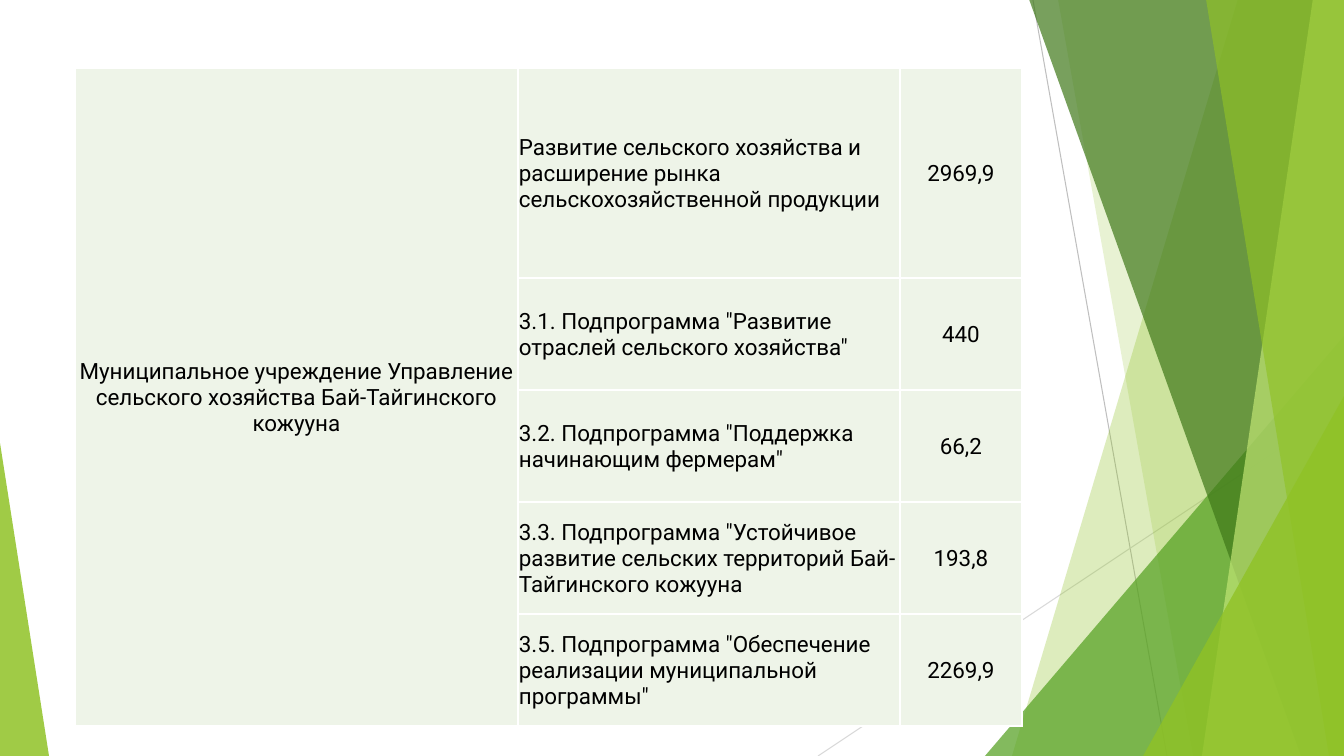
import pptx
import pptx.util
import pptx.dml.color
import pptx.enum.shapes
import pptx.enum.text
import pptx.oxml.ns
from lxml import etree

RGB = pptx.dml.color.RGBColor
MSO_SHAPE = pptx.enum.shapes.MSO_SHAPE
PP_ALIGN = pptx.enum.text.PP_ALIGN
qn = pptx.oxml.ns.qn

EMU_PER_PX = 914400 / 100.8
SLIDE_W, SLIDE_H = 1344, 756

LIME = RGB(0x90, 0xC2, 0x26)
GREEN = RGB(0x54, 0xA0, 0x21)
DARK_GREEN = RGB(0x3F, 0x78, 0x19)
PALE_LIME = RGB(0xC0, 0xE4, 0x74)
GRAY = RGB(0xBF, 0xBF, 0xBF)
LIGHT_GRAY = RGB(0xD9, 0xD9, 0xD9)
CELL_GREEN = RGB(0xEE, 0xF4, 0xE8)
BLACK = RGB(0, 0, 0)
WHITE = RGB(0xFF, 0xFF, 0xFF)

DEPARTMENT = "Муниципальное учреждение Управление сельского хозяйства Бай-Тайгинского кожууна"
PROGRAMMES = [
    ("Развитие сельского хозяйства и расширение рынка сельскохозяйственной продукции", "2969,9"),
    ('3.1. Подпрограмма "Развитие отраслей сельского хозяйства"', "440"),
    ('3.2. Подпрограмма "Поддержка начинающим фермерам"', "66,2"),
    ('3.3. Подпрограмма "Устойчивое развитие сельских территорий Бай-Тайгинского кожууна', "193,8"),
    ('3.5. Подпрограмма "Обеспечение реализации муниципальной программы"', "2269,9"),
]
COLUMN_WIDTHS = [443, 382, 122]
ROW_HEIGHTS = [210] + [112] * 4


def px(length):
    return pptx.util.Emu(round(length * EMU_PER_PX))


def add_ray(slide, x1, y1, x2, y2, color):
    ray = slide.shapes.add_connector(
        pptx.enum.shapes.MSO_CONNECTOR.STRAIGHT, px(x1), px(y1), px(x2), px(y2))
    ray.line.color.rgb = color
    ray.line.width = pptx.util.Pt(0.75)
    etree.SubElement(ray._element.spPr, qn("a:effectLst"))


def paint(facet, color, opacity):
    facet.shadow.inherit = False
    facet.line.fill.background()
    facet.fill.solid()
    facet.fill.fore_color.rgb = color
    srgb = facet._element.spPr.find(qn("a:solidFill"))[0]
    etree.SubElement(srgb, qn("a:alpha"), val=str(opacity * 1000))


def add_band(slide, top_x, bottom_x, color, opacity):
    """Band from a slanted left edge to the right side of the slide."""
    builder = slide.shapes.build_freeform(top_x, -1, scale=EMU_PER_PX)
    builder.add_line_segments(
        [(SLIDE_W, -1), (SLIDE_W, SLIDE_H), (bottom_x, SLIDE_H)], close=True)
    paint(builder.convert_to_shape(), color, opacity)


def add_corner(slide, left, top, width, apex, color, opacity):
    """Triangle standing on the bottom of the slide."""
    corner = slide.shapes.add_shape(
        MSO_SHAPE.ISOSCELES_TRIANGLE, px(left), px(top), px(width), px(SLIDE_H - top))
    corner.adjustments[0] = apex
    paint(corner, color, opacity)


def add_facets(slide):
    add_ray(slide, 1033, 0, 1167, SLIDE_H, GRAY)
    add_ray(slide, SLIDE_W, 406, 818, SLIDE_H, LIGHT_GRAY)
    add_band(slide, 1238, 1012, LIME, 30)
    add_band(slide, 1058, 1193, LIME, 20)
    add_corner(slide, 985, 336, 359, 1, GREEN, 72)
    add_band(slide, 1029, 1301, DARK_GREEN, 70)
    add_band(slide, 1313, 1202, PALE_LIME, 70)
    add_band(slide, 1206, 1329, LIME, 65)
    add_corner(slide, 1143, 396, 201, 1, LIME, 80)
    add_corner(slide, 0, 443, 49, 0, LIME, 85)


def style_cell(cell):
    # White borders come before the fill in the cell properties
    properties = cell._tc.get_or_add_tcPr()
    for side in ("a:lnL", "a:lnR", "a:lnT", "a:lnB"):
        border = etree.SubElement(properties, qn(side), w=str(pptx.util.Pt(1)))
        fill = etree.SubElement(border, qn("a:solidFill"))
        etree.SubElement(fill, qn("a:srgbClr"), val=str(WHITE))
    cell.fill.solid()
    cell.fill.fore_color.rgb = CELL_GREEN
    cell.margin_left = cell.margin_right = cell.margin_top = px(1)
    cell.margin_bottom = 0
    cell.vertical_anchor = pptx.enum.text.MSO_ANCHOR.MIDDLE


def write_cell(cell, text, align):
    cell.text_frame.text = text
    paragraph = cell.text_frame.paragraphs[0]
    paragraph.alignment = align
    font = paragraph.runs[0].font
    font.name = "Roboto"
    font.size = pptx.util.Pt(16)
    font.bold = False
    font.color.rgb = BLACK


def add_budget_table(slide):
    budget = slide.shapes.add_table(
        len(ROW_HEIGHTS), len(COLUMN_WIDTHS), px(75), px(68),
        px(sum(COLUMN_WIDTHS)), px(sum(ROW_HEIGHTS))).table
    budget.first_row = budget.horz_banding = False
    for column, width in zip(budget.columns, COLUMN_WIDTHS):
        column.width = px(width)
    for row, height in zip(budget.rows, ROW_HEIGHTS):
        row.height = px(height)
    for cell in budget.iter_cells():
        style_cell(cell)

    budget.cell(0, 0).merge(budget.cell(len(PROGRAMMES) - 1, 0))
    write_cell(budget.cell(0, 0), DEPARTMENT, PP_ALIGN.CENTER)
    for i, (programme, amount) in enumerate(PROGRAMMES):
        write_cell(budget.cell(i, 1), programme, PP_ALIGN.LEFT)
        write_cell(budget.cell(i, 2), amount, PP_ALIGN.CENTER)


def main():
    deck = pptx.Presentation()
    deck.slide_width, deck.slide_height = px(SLIDE_W), px(SLIDE_H)
    # The slide has no title, so it uses the blank layout
    slide = deck.slides.add_slide(deck.slide_layouts[6])
    add_facets(slide)
    add_budget_table(slide)
    deck.save("out.pptx")


if __name__ == "__main__":
    main()
